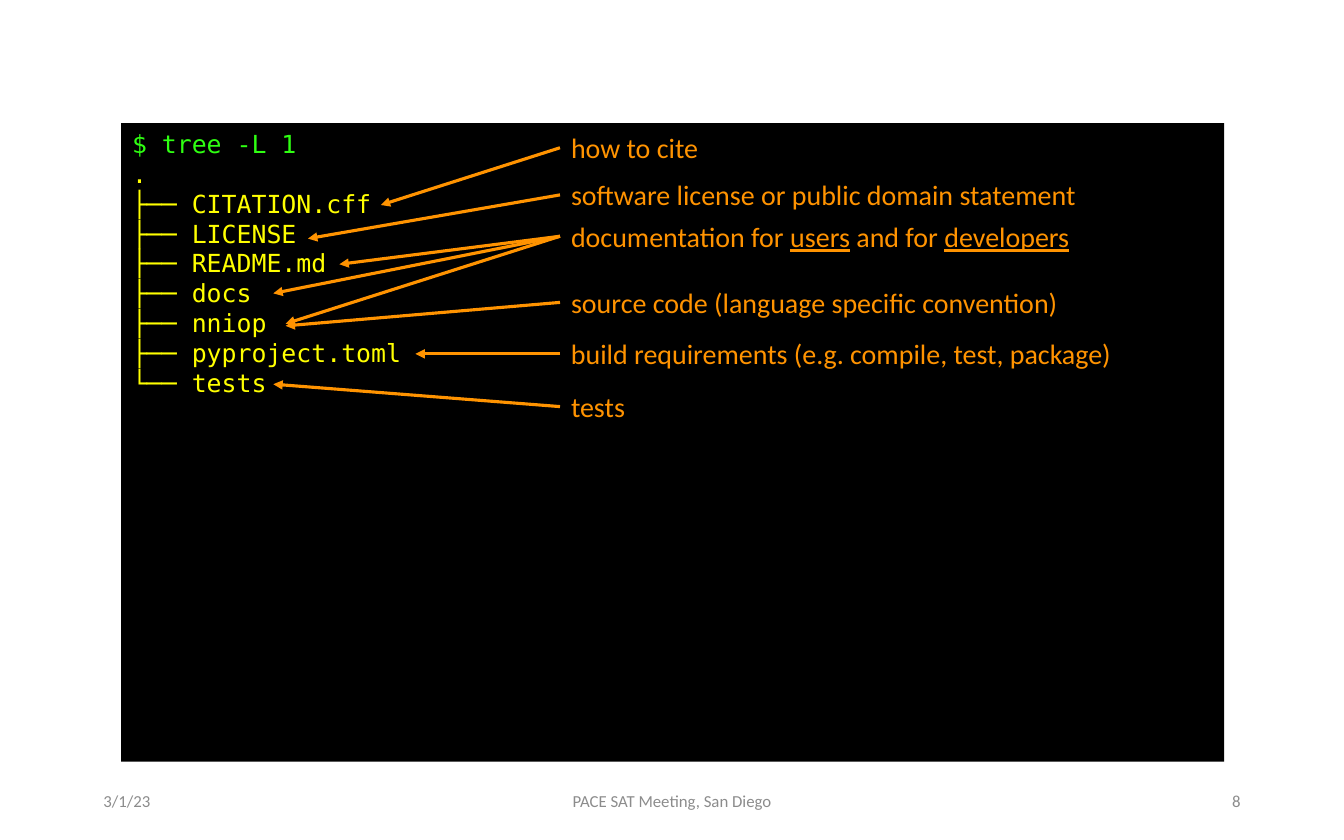
from dataclasses import dataclass

from lxml import etree
from pptx import Presentation
from pptx.dml.color import RGBColor
from pptx.enum import shapes, text
from pptx.oxml import ns
from pptx.util import Pt


@dataclass(frozen=True)
class Theme:
    panel: str = "000000"
    prompt: str = "2FFF12"
    tree: str = "FFFF00"
    note: str = "FF9300"
    foot: str = "8C8C8C"
    sans: str = "Calibri"
    mono: str = "DejaVu Sans Mono"
    code_size: float = 16
    note_size: float = 18
    foot_size: float = 10.8
    pitch: float = 19.2
    stroke: float = 2


T = Theme()

# Terminal lines
CODE = [
    "$ tree -L 1",
    ".",
    "├── CITATION.cff",
    "├── LICENSE",
    "├── README.md",
    "├── docs",
    "├── nniop",
    "├── pyproject.toml",
    "└── tests",
]

# Notes: top, width, runs (text, underlined), arrow tips; relative to the panel
NOTES = [
    (1.4, 426.2, [("how to cite", False)], [(167, 52.6)]),
    (31.7, 426.2, [("software license or public domain statement", False)],
     [(120.2, 74.2)]),
    (58.3, 426.2, [("documentation for ", False), ("users", True),
                   (" and for ", False), ("developers", True)],
     [(140.4, 90.7), (97.9, 109.4), (105.8, 128.9)]),
    (100.8, 426.2, [("source code (language specific convention)", False)],
     [(105.8, 130.3)]),
    (133.9, 432, [("build requirements (e.g. compile, test, package)", False)],
     [(189.3, 148.3)]),
    (167.8, 414, [("tests", False)], [(97.9, 167.8)]),
]
NOTE_X, NOTE_H = 282.2, 28.8


def add_run(para, words, size, face, color, under=False):
    run = para.add_run()
    run.text = words
    font = run.font
    font.size, font.name = Pt(size), face
    font.color.rgb = RGBColor.from_string(color)
    if under:
        font.underline = True


def add_box(slide, x, y, w, h):
    box = slide.shapes.add_textbox(Pt(x), Pt(y), Pt(w), Pt(h))
    box.text_frame.word_wrap = True
    return box


def add_arrow(slide, label, x, y):
    line = slide.shapes.add_connector(
        shapes.MSO_CONNECTOR.STRAIGHT, label.left, label.top, Pt(x), Pt(y))
    line.begin_connect(label, 1)
    line.line.width = Pt(T.stroke)
    line.line.color.rgb = RGBColor.from_string(T.note)
    # Arrowhead, and no shadow
    tail = etree.SubElement(line.line._get_or_add_ln(), ns.qn("a:tailEnd"))
    tail.set("type", "triangle")
    etree.SubElement(line._element.spPr, ns.qn("a:effectLst"))


def draw_panel(slide, x, y, w, h):
    panel = slide.shapes.add_shape(
        shapes.MSO_SHAPE.RECTANGLE, Pt(x), Pt(y), Pt(w), Pt(h))
    panel.shadow.inherit = False
    panel.fill.solid()
    panel.fill.fore_color.rgb = RGBColor.from_string(T.panel)
    panel.line.fill.background()
    frame = panel.text_frame
    frame.word_wrap = True
    frame.vertical_anchor = text.MSO_ANCHOR.TOP
    for i, words in enumerate(CODE):
        para = frame.add_paragraph() if i else frame.paragraphs[0]
        para.alignment = text.PP_ALIGN.LEFT
        para.line_spacing = Pt(T.pitch)
        color = T.tree if i else T.prompt
        add_run(para, words, T.code_size, T.mono, color)


def draw_notes(slide, x, y):
    for top, wide, runs, tips in NOTES:
        label = add_box(slide, x + NOTE_X, y + top, wide, NOTE_H)
        label.text_frame.auto_size = text.MSO_AUTO_SIZE.SHAPE_TO_FIT_TEXT
        for words, under in runs:
            add_run(label.text_frame.paragraphs[0], words,
                    T.note_size, T.sans, T.note, under)
        for dx, dy in tips:
            add_arrow(slide, label, x + dx, y + dy)


def draw_footer(slide, x, y, w, h):
    side, mid = 194.4, 291.6
    align = text.PP_ALIGN
    parts = [
        ("3/1/23", x, side, align.LEFT),
        ("PACE SAT Meeting, San Diego", x + (w - mid) / 2, mid, align.CENTER),
        ("8", x + w - side, side, align.RIGHT),
    ]
    for words, left, wide, side_to in parts:
        frame = add_box(slide, left, y, wide, h).text_frame
        frame.vertical_anchor = text.MSO_ANCHOR.MIDDLE
        para = frame.paragraphs[0]
        para.alignment = side_to
        add_run(para, words, T.foot_size, T.sans, T.foot)


def main():
    deck = Presentation()
    deck.slide_width, deck.slide_height = Pt(864), Pt(540)
    slide = deck.slides.add_slide(deck.slide_layouts[6])
    x, y = 77.8, 79.2
    draw_footer(slide, 59.4, 500.4, 745.2, 28.8)
    draw_panel(slide, x, y, 709.2, 410.4)
    draw_notes(slide, x, y)
    deck.save("out.pptx")


if __name__ == "__main__":
    main()
